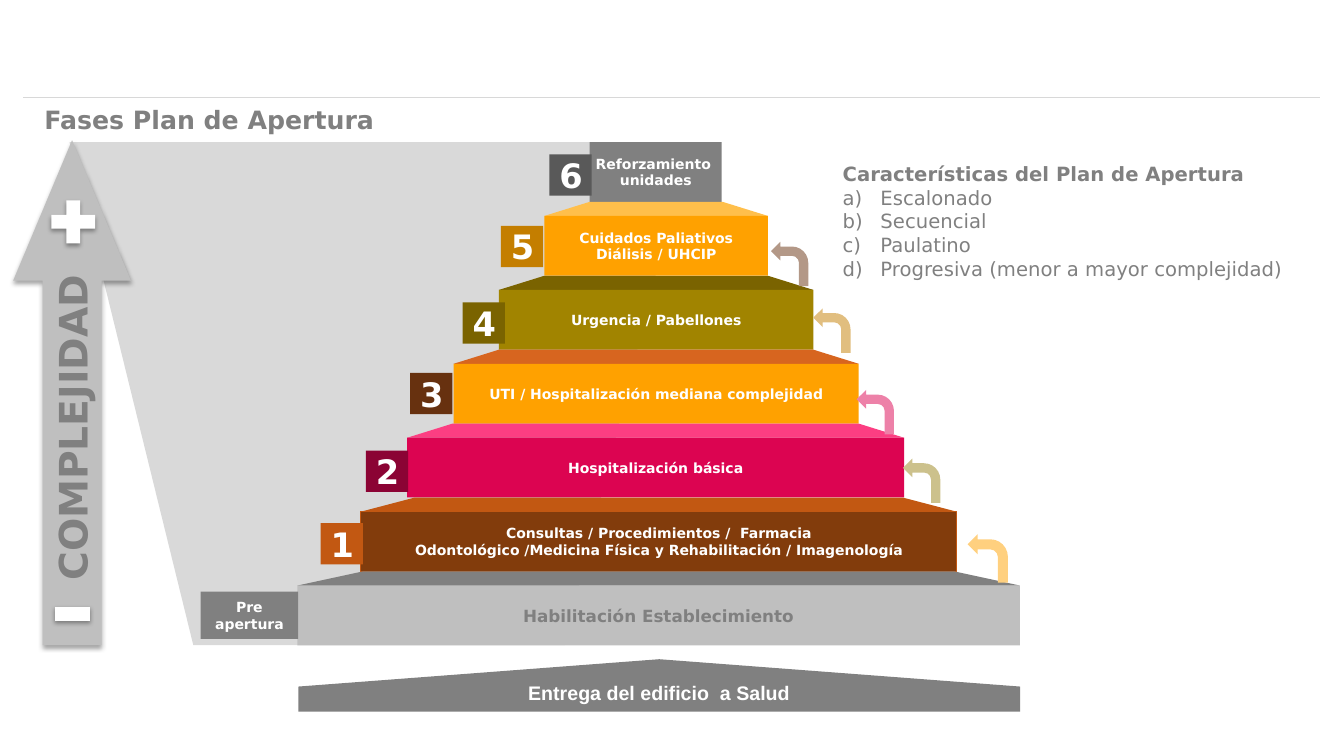
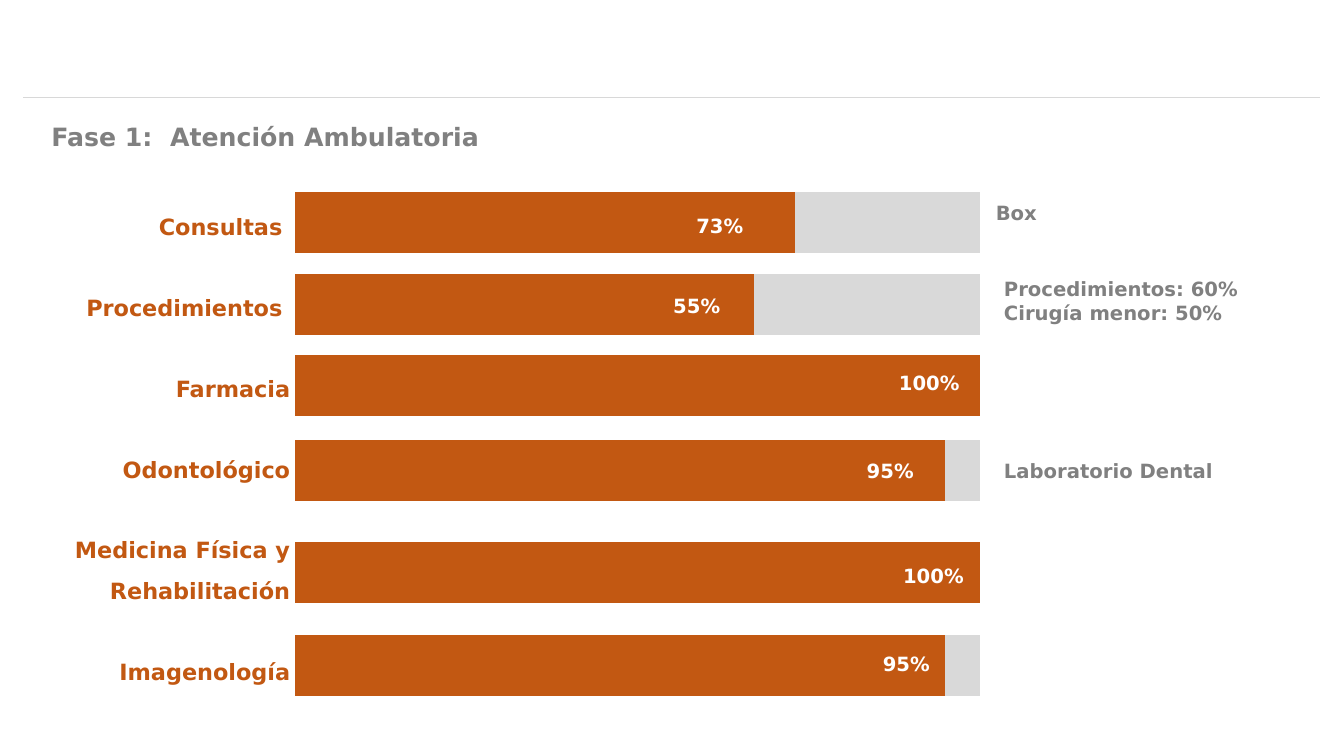
from lxml import etree
from pptx import Presentation
from pptx.chart.data import CategoryChartData
from pptx.dml.color import RGBColor
from pptx.enum.chart import XL_CHART_TYPE
from pptx.enum.shapes import MSO_CONNECTOR, MSO_SHAPE
from pptx.enum.text import MSO_ANCHOR, MSO_AUTO_SIZE, PP_ALIGN
from pptx.oxml.ns import qn
from pptx.util import Pt

RECT = MSO_SHAPE.RECTANGLE
TRAPEZOID = MSO_SHAPE.TRAPEZOID
FUNNEL = MSO_SHAPE.FLOWCHART_MANUAL_OPERATION
UP_ARROW = MSO_SHAPE.UP_ARROW
PLUS = MSO_SHAPE.MATH_PLUS
MINUS = MSO_SHAPE.MATH_MINUS
PENTAGON = MSO_SHAPE.PENTAGON
BENT_ARROW = MSO_SHAPE.BENT_ARROW
STRAIGHT = MSO_CONNECTOR.STRAIGHT
STACKED_BAR = XL_CHART_TYPE.BAR_STACKED_100
LEFT, CENTER, RIGHT = PP_ALIGN.LEFT, PP_ALIGN.CENTER, PP_ALIGN.RIGHT
TOP, MIDDLE = MSO_ANCHOR.TOP, MSO_ANCHOR.MIDDLE
NO_AUTOFIT = MSO_AUTO_SIZE.NONE

WHITE = RGBColor(0xFF, 0xFF, 0xFF)
BLACK = RGBColor(0, 0, 0)
RULE_GRAY = RGBColor(0xD8, 0xD8, 0xD8)
PALE_GRAY = RGBColor(0xD9, 0xD9, 0xD9)
LIGHT_GRAY = RGBColor(0xBF, 0xBF, 0xBF)
GRAY = RGBColor(0x80, 0x80, 0x80)
DARK_GRAY = RGBColor(0x59, 0x59, 0x59)
RUST = RGBColor(0xC2, 0x58, 0x12)
BROWN = RGBColor(0x82, 0x3C, 0x0C)
DARK_BROWN = RGBColor(0x67, 0x31, 0x0F)
CRIMSON = RGBColor(0xDC, 0x04, 0x51)
PINK = RGBColor(0xFC, 0x3E, 0x82)
WINE = RGBColor(0x8B, 0x03, 0x34)
AMBER = RGBColor(0xFF, 0xA1, 0x00)
LIGHT_AMBER = RGBColor(0xFF, 0xBF, 0x4B)
DARK_AMBER = RGBColor(0xC4, 0x7E, 0x00)
ORANGE = RGBColor(0xD7, 0x65, 0x1F)
OLIVE = RGBColor(0xA1, 0x84, 0x00)
DARK_OLIVE = RGBColor(0x7A, 0x63, 0x00)
STEP_YELLOW = RGBColor(0xFF, 0xD0, 0x7F)
STEP_OLIVE = RGBColor(0xCC, 0xC1, 0x8C)
STEP_PINK = RGBColor(0xED, 0x81, 0xA8)
STEP_TAN = RGBColor(0xE1, 0xBE, 0x7F)
STEP_BROWN = RGBColor(0xB3, 0x98, 0x87)

MAIN_FONT = "DejaVu Sans"
SECOND_FONT = "Arial"

PYRAMID_TOP, TIER_PITCH, FRONT_HEIGHT = 101.5, 52.8, 42.7
SLOPE_HEIGHT = TIER_PITCH - FRONT_HEIGHT

TIERS = [
    (421.2, 94.3, 0, GRAY, None, ["Reforzamiento ", "unidades"]),
    (388.8, 159.8, 32.4, AMBER, LIGHT_AMBER,
     ["Cuidados Paliativos", " Diálisis / UHCIP "]),
    (356.4, 224.6, 32.4, OLIVE, DARK_OLIVE, ["Urgencia / Pabellones"]),
    (324, 289.4, 32.4, AMBER, ORANGE,
     ["UTI / Hospitalización mediana complejidad"]),
    (290.9, 354.9, 32.4, CRIMSON, PINK, ["Hospitalización básica"]),
    (257.8, 425.5, 38.5, BROWN, RUST,
     ["Consultas / Procedimientos /  Farmacia",
      "Odontológico /Medicina Física y Rehabilitación / Imagenología"]),
    (212.4, 516.2, 46.8, LIGHT_GRAY, GRAY, ["Habilitación Establecimiento"]),
]

BADGES = [
    ("6", 392.4, 110.2, DARK_GRAY),
    ("5", 357.8, 161.3, DARK_AMBER),
    ("4", 330.5, 216, DARK_OLIVE),
    ("3", 293, 266.4, DARK_BROWN),
    ("2", 261.4, 321.8, WINE),
    ("1", 229, 373.7, RUST),
]

STEPS = [
    ((691.2, 381.6, 28.8, 34.6), STEP_YELLOW),
    ((645.1, 327.6, 26.6, 31.7), STEP_OLIVE),
    ((612, 278.6, 26.6, 31.7), STEP_PINK),
    ((581, 220.3, 26.6, 31.7), STEP_TAN),
    ((550.8, 172.8, 26.6, 31.7), STEP_BROWN),
]

FEATURES_HEADING = "Características del Plan de Apertura"
FEATURES = ["Escalonado", "Secuencial", "Paulatino",
            "Progresiva (menor a mayor complejidad)"]

SERVICES = ["Consultas ", "Procedimientos ", "Farmacia", "Odontológico",
            "Medicina Física y Rehabilitación", "Imagenología"]

PROGRESS = [
    (127.4, 73, "73%", 490.3, 149),
    (185.8, 67, "55%", 473.8, 206.6),
    (243.4, 100, "100%", 635, 261.4),
    (304.6, 95, "95%", 612, 324),
    (377.3, 100, "100%", 638, 399.6),
    (443.5, 95, "95%", 623.5, 462.2),
]

REMARKS = [
    (704.2, 139.7, ["Box"]),
    (710, 194.4, ["Procedimientos: 60%", "Cirugía menor: 50%"]),
    (710, 324, ["Laboratorio Dental"]),
]


def assign(target, values):
    for name, value in values.items():
        setattr(target, name, value)


def box(left, top, width, height):
    return [Pt(length) for length in (left, top, width, height)]


def place(shape, left, top, width, height):
    assign(shape, dict(zip(("left", "top", "width", "height"),
                           box(left, top, width, height))))


def write(frame, lines, size, color, bold=True, font=MAIN_FONT, align=CENTER,
          anchor=MIDDLE, wrap=True):
    assign(frame, {"auto_size": NO_AUTOFIT, "word_wrap": wrap,
                   "vertical_anchor": anchor})
    for index, line in enumerate(lines):
        paragraph = frame.add_paragraph() if index else frame.paragraphs[0]
        assign(paragraph, {"alignment": align, "space_before": Pt(0)})
        run = paragraph.add_run()
        run.text = line
        assign(run.font, {"size": Pt(size), "bold": bold, "name": font})
        run.font.color.rgb = color


def add_figure(slide, kind, frame, fill, adjustments=()):
    figure = slide.shapes.add_shape(kind, *box(*frame))
    figure.shadow.inherit = False
    figure.fill.solid()
    figure.fill.fore_color.rgb = fill
    figure.line.fill.background()
    for index, value in enumerate(adjustments):
        figure.adjustments[index] = value
    return figure


def add_shadow(figure):
    effects = figure._element.spPr.find(qn("a:effectLst"))
    shadow = etree.SubElement(effects, qn("a:outerShdw"), blurRad="40000",
                              dist="23000", dir="5400000", rotWithShape="0")
    color = etree.SubElement(shadow, qn("a:srgbClr"), val=str(BLACK))
    etree.SubElement(color, qn("a:alpha"), val="35000")


def turn_text(figure, direction):
    figure.text_frame._txBody.bodyPr.set("vert", direction)


def add_label(slide, frame, lines, color):
    label = slide.shapes.add_textbox(*box(*frame))
    write(label.text_frame, lines, 14, color, align=LEFT, anchor=TOP)


def set_bullet(paragraph, tag, **attributes):
    properties = paragraph._p.get_or_add_pPr()
    indent = Pt(27) if attributes else 0
    properties.set("marL", str(indent))
    properties.set("indent", str(-indent))
    if attributes:
        bullet_color = etree.SubElement(properties, qn("a:buClr"))
        etree.SubElement(bullet_color, qn("a:srgbClr"), val=str(GRAY))
    etree.SubElement(properties, qn(tag), **attributes)


def new_slide(deck, title, frame):
    slide = deck.slides.add_slide(deck.slide_layouts[1])
    place(slide.shapes.title, *frame)
    write(slide.shapes.title.text_frame, [title], 18, GRAY, align=LEFT,
          anchor=TOP)
    rule = slide.shapes.add_connector(STRAIGHT, Pt(16.6), Pt(69.4),
                                      Pt(943.2), Pt(69.4))
    rule.line.color.rgb = RULE_GRAY
    rule.line.width = Pt(0.75)
    etree.SubElement(rule._element.spPr, qn("a:effectLst"))
    return slide


def add_tier(slide, level, left, width, inset, front_color, slope_color, lines):
    top = PYRAMID_TOP + level * TIER_PITCH
    if slope_color:
        add_figure(slide, TRAPEZOID,
                   (left, top - SLOPE_HEIGHT, width, SLOPE_HEIGHT),
                   slope_color, [inset / SLOPE_HEIGHT])
    front = add_figure(slide, RECT, (left, top, width, FRONT_HEIGHT), front_color)
    if front_color == BROWN:
        front.line.color.rgb = RUST
        front.line.width = Pt(0.75)
    is_base = front_color == LIGHT_GRAY
    write(front.text_frame, lines, 12 if is_base else 10,
          GRAY if is_base else WHITE, wrap=False)


def add_complexity_arrow(slide):
    arrow = add_figure(slide, UP_ARROW, (9.4, 100.1, 84.2, 360.7), LIGHT_GRAY,
                       [0.5, 1.193])
    turn_text(arrow, "vert270")
    write(arrow.text_frame, ["COMPLEJIDAD"], 28, GRAY)
    minus = add_figure(slide, MINUS, (34.6, 416.9, 34.6, 43.2), WHITE)
    plus = add_figure(slide, PLUS, (31, 137.5, 42.5, 41.8), WHITE)
    for figure in (arrow, minus, plus):
        add_shadow(figure)


def add_handover(slide):
    handover = add_figure(slide, PENTAGON, (452.2, 231.8, 37.4, 515.5), GRAY,
                          [0.522])
    handover.rotation = 270
    turn_text(handover, "vert")
    write(handover.text_frame, ["Entrega del edificio  a Salud"], 14, WHITE,
          font=SECOND_FONT)


def add_step(slide, frame, color):
    step = add_figure(slide, BENT_ARROW, frame, color)
    step._element.spPr.find(qn("a:xfrm")).set("flipH", "1")


def add_features(slide):
    features = slide.placeholders[1]
    place(features, 594.7, 112.3, 365, 92.2)
    frame = features.text_frame
    write(frame, [FEATURES_HEADING] + FEATURES, 14, GRAY, bold=False,
          align=LEFT, anchor=TOP)
    heading, *items = frame.paragraphs
    heading.runs[0].font.bold = True
    set_bullet(heading, "a:buNone")
    for item in items:
        set_bullet(item, "a:buAutoNum", type="alphaLcParenR")


def add_services(slide):
    services = slide.placeholders[1]
    place(services, 29.5, 139, 185, 356.4)
    write(services.text_frame, SERVICES, 16, RUST, align=RIGHT, anchor=TOP)
    for index, paragraph in enumerate(services.text_frame.paragraphs):
        set_bullet(paragraph, "a:buNone")
        assign(paragraph, {"line_spacing": 1.5,
                           "space_before": Pt(29 if index else 0)})
    slide.shapes._spTree.append(services._element)


def add_progress_bar(slide, top, done):
    data = CategoryChartData()
    data.categories = ["1"]
    data.add_series("Series 1", [done])
    data.add_series("Series 2", [100 - done])
    chart = slide.shapes.add_chart(STACKED_BAR, *box(200.2, top, 509.8, 63.4),
                                   data).chart
    assign(chart, {"has_legend": False, "has_title": False})
    assign(chart.font, {"size": Pt(10), "name": SECOND_FONT})
    chart.font.color.rgb = BLACK
    chart.category_axis.visible = False
    assign(chart.value_axis, {"visible": False, "has_major_gridlines": False,
                              "minimum_scale": 0})
    plot = chart.plots[0]
    assign(plot, {"gap_width": 40, "overlap": 100, "vary_by_categories": False})
    for series, color in zip(plot.series, (RUST, PALE_GRAY)):
        series.format.fill.solid()
        series.format.fill.fore_color.rgb = color
    fit_plot(chart)


def fit_plot(chart):
    area = chart._chartSpace.find(".//" + qn("c:plotArea"))
    for existing in area.findall(qn("c:layout")):
        area.remove(existing)
    layout = etree.Element(qn("c:layout"))
    area.insert(0, layout)
    manual = etree.SubElement(layout, qn("c:manualLayout"))
    for tag, value in (("layoutTarget", "inner"), ("xMode", "edge"),
                       ("yMode", "edge"), ("x", "0.02"), ("y", "0.02"),
                       ("w", "0.96"), ("h", "0.96")):
        etree.SubElement(manual, qn("c:" + tag), val=value)


def build_phases(deck):
    slide = new_slide(deck, "Fases Plan de Apertura", (24.5, 70.6, 467.3, 29))
    add_figure(slide, FUNNEL, (49.7, 101.5, 442.1, 359.3), PALE_GRAY)
    for level, tier in enumerate(TIERS):
        add_tier(slide, level, *tier)
    for number, left, top, color in BADGES:
        badge = add_figure(slide, RECT, (left, top, 30.2, 29.5), color)
        write(badge.text_frame, [number], 24, WHITE)
    add_complexity_arrow(slide)
    add_handover(slide)
    opening = add_figure(slide, RECT, (143.3, 422.6, 69.8, 33.8), GRAY)
    write(opening.text_frame, ["Pre", "apertura"], 10, WHITE)
    for frame, color in STEPS:
        add_step(slide, frame, color)
    add_features(slide)


def build_outpatient(deck):
    slide = new_slide(deck, "Fase 1:  Atención Ambulatoria",
                      (29.5, 82.8, 591, 29))
    for top, done, percent, percent_left, percent_top in PROGRESS:
        add_progress_bar(slide, top, done)
        add_label(slide, (percent_left, percent_top, 72, 24.5), [percent], WHITE)
    add_services(slide)
    for left, top, lines in REMARKS:
        add_label(slide, (left, top, 245, 7.5 + 17 * len(lines)), lines, GRAY)


def main():
    deck = Presentation()
    assign(deck, {"slide_width": Pt(960), "slide_height": Pt(540)})
    build_phases(deck)
    build_outpatient(deck)
    deck.save("out.pptx")


if __name__ == "__main__":
    main()
